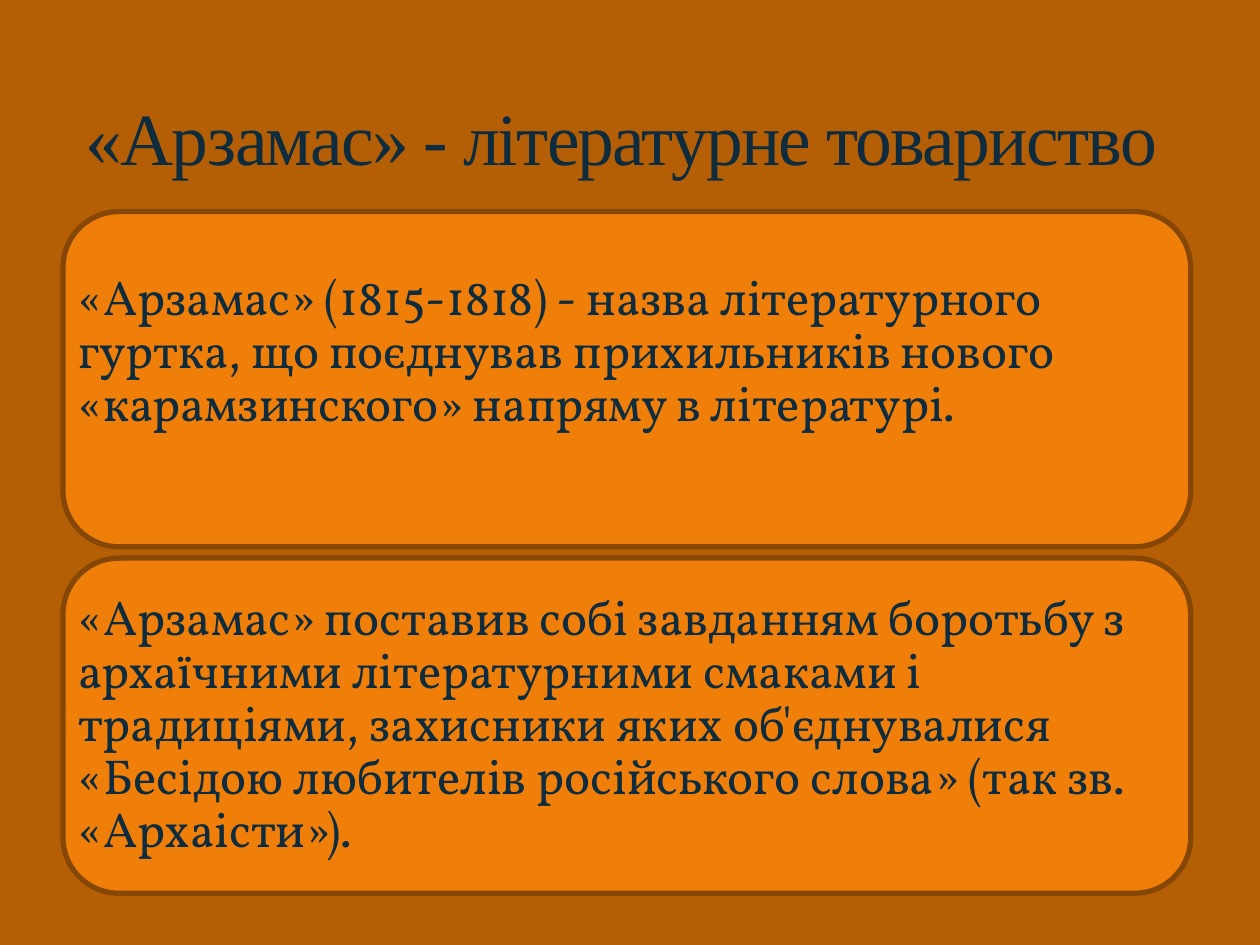
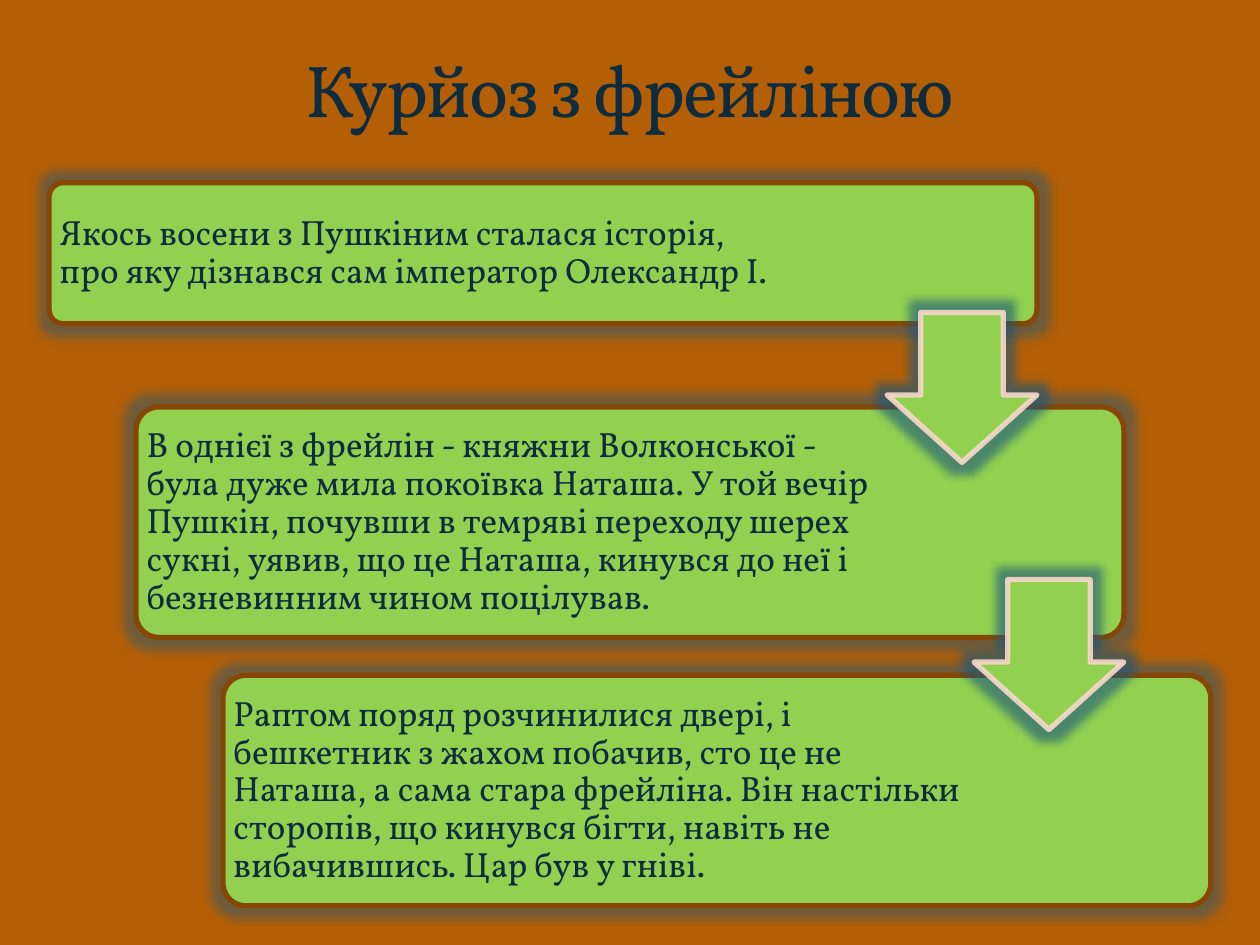
"""Build two slides on the Arzamas circle and a story about Pushkin."""
from lxml import etree
from pptx import Presentation
from pptx.dml.color import RGBColor
from pptx.enum import shapes, text
from pptx.oxml import ns
from pptx.util import Pt

BACKGROUND = RGBColor(0xB4, 0x5F, 0x06)
INK = RGBColor(0x0E, 0x2C, 0x3E)
ORANGE = RGBColor(0xF0, 0x7F, 0x09)
GREEN = RGBColor(0x92, 0xD0, 0x50)
BORDER = RGBColor(0x86, 0x47, 0x04)
ARROW_EDGE = RGBColor(0xF9, 0xD8, 0xCC)
GLOW = RGBColor(0x1B, 0x58, 0x7C)

TITLE = dict(font="Times New Roman", size=42, anchor=text.MSO_ANCHOR.BOTTOM,
             align=text.PP_ALIGN.CENTER, spacing=1, tracking=-100, insets=(7.2, 3.6, 7.2, 3.6))
BODY = dict(font="Vollkorn", size=28, anchor=text.MSO_ANCHOR.MIDDLE,
            align=text.PP_ALIGN.LEFT, spacing=0.9, tracking=0, insets=(8.64,) * 4)
STORY = {**BODY, "size": 20, "insets": (6,) * 4}


def add_panel(page, kind, place, fill, edge, adjustments=(), glow=0):
    panel = page.shapes.add_shape(kind, *map(Pt, place))
    panel.shadow.inherit = False
    panel.fill.solid()
    panel.fill.fore_color.rgb = fill
    panel.line.color.rgb = edge
    panel.line.width = Pt(3)
    for index, value in enumerate(adjustments):
        panel.adjustments[index] = value
    if glow:
        effects = panel._element.spPr.find(ns.qn("a:effectLst"))
        halo = etree.SubElement(effects, ns.qn("a:glow"), rad=str(Pt(11)))
        tint = etree.SubElement(halo, ns.qn("a:srgbClr"), val=str(GLOW))
        etree.SubElement(tint, ns.qn("a:alpha"), val=str(glow * 1000))
    return panel


def add_text(page, words, place, style):
    box = page.shapes.add_textbox(*map(Pt, place))
    frame = box.text_frame
    frame.word_wrap = True
    frame.vertical_anchor = style["anchor"]
    for side, inset in zip(("left", "top", "right", "bottom"), style["insets"]):
        setattr(frame, f"margin_{side}", Pt(inset))
    para = frame.paragraphs[0]
    para.alignment = style["align"]
    para.line_spacing = style["spacing"]
    span = para.add_run()
    span.text = words
    for name, value in {"name": style["font"], "size": Pt(style["size"])}.items():
        setattr(span.font, name, value)
    span.font.color.rgb = INK
    if style["tracking"]:
        span.font._element.set("spc", str(style["tracking"]))


deck = Presentation()
deck.slide_width, deck.slide_height = Pt(720), Pt(540)
pages = []
for title, place, font in (
    ("«Арзамас» - літературне товариство", (30.96, 37.44, 648, 69.12), "Times New Roman"),
    ("Курйоз з фрейліною", (36, 12.24, 648, 66.96), "Vollkorn"),
):
    page = deck.slides.add_slide(deck.slide_layouts[6])
    page.background.fill.solid()
    page.background.fill.fore_color.rgb = BACKGROUND
    add_text(page, title, place, {**TITLE, "font": font})
    pages.append(page)
society_page, story_page = pages

society_texts = (
    ("«Арзамас» (1815-1818) - назва літературного гуртка, що поєднував прихильників нового "
     "«карамзинского» напряму в літературі.", 38.64),
    ("«Арзамас» поставив собі завданням боротьбу з архаїчними літературними смаками і традиціями, "
     "захисники яких об'єднувалися «Бесідою любителів російського слова» (так зв. «Архаісти»).", 8.64),
)
for row, (words, bottom_inset) in enumerate(society_texts):
    place = (36, 120.96 + row * 198, 644.4, 191.52)
    add_panel(society_page, shapes.MSO_SHAPE.ROUNDED_RECTANGLE, place, ORANGE, BORDER)
    add_text(society_page, words, place, {**BODY, "insets": (8.64, 8.64, 8.64, bottom_inset)})

story_left, story_step, story_width = 28.08, 49.68, 564.48
story_steps = (
    ("Якось восени з Пушкіним сталася історія, про яку дізнався сам імператор Олександр I.",
     104.4, 80.64),
    ("В однієї з фрейлін - княжни Волконської - була дуже мила покоївка Наташа. У той вечір "
     "Пушкін, почувши в темряві переходу шерех сукні, уявив, що це Наташа, кинувся до неї і "
     "безневинним чином поцілував.", 232.56, 131.76),
    ("Раптом поряд розчинилися двері, і бешкетник з жахом побачив, сто це не Наташа, а сама "
     "стара фрейліна. Він настільки сторопів, що кинувся бігти, навіть не вибачившись. "
     "Цар був у гніві.", 385.92, 131.76),
)
for index, (words, top, height) in enumerate(story_steps):
    left = story_left + index * story_step
    add_panel(story_page, shapes.MSO_SHAPE.ROUNDED_RECTANGLE, (left, top, story_width, height),
              GREEN, BORDER, (0.1,), glow=45)
    add_text(story_page, words, (left, top, 429.5, height), STORY)

arrow_size = 85.68
for index, top in enumerate((178.56, 331.2)):
    left = story_left + index * story_step + story_width - arrow_size
    arrow = add_panel(story_page, shapes.MSO_SHAPE.DOWN_ARROW, (left, top, arrow_size, arrow_size),
                      GREEN, ARROW_EDGE, (0.55, 0.45), glow=60)
    edge_color = arrow._element.spPr.find(ns.qn("a:ln")).find(".//" + ns.qn("a:srgbClr"))
    etree.SubElement(edge_color, ns.qn("a:alpha"), val="90000")

deck.save("out.pptx")
